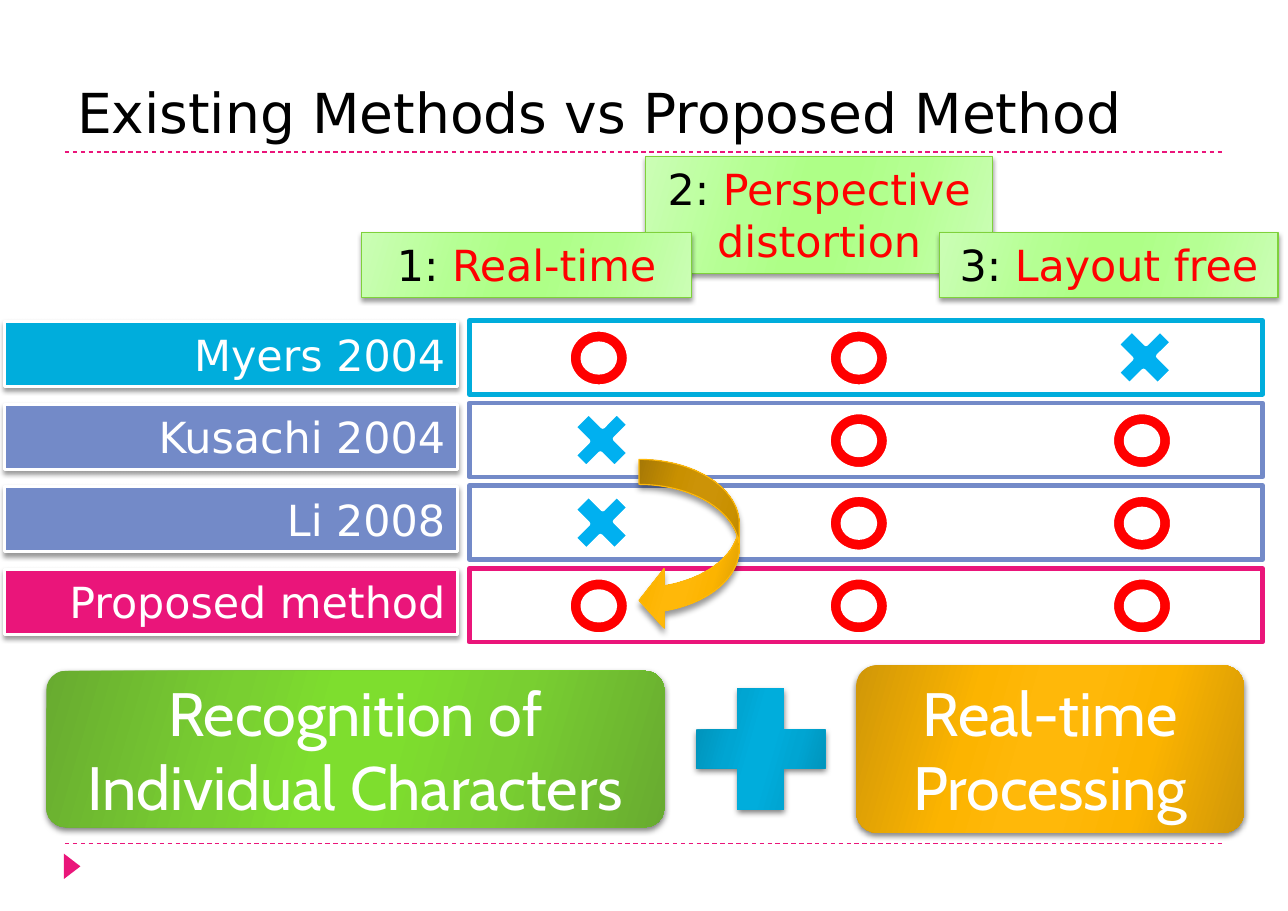
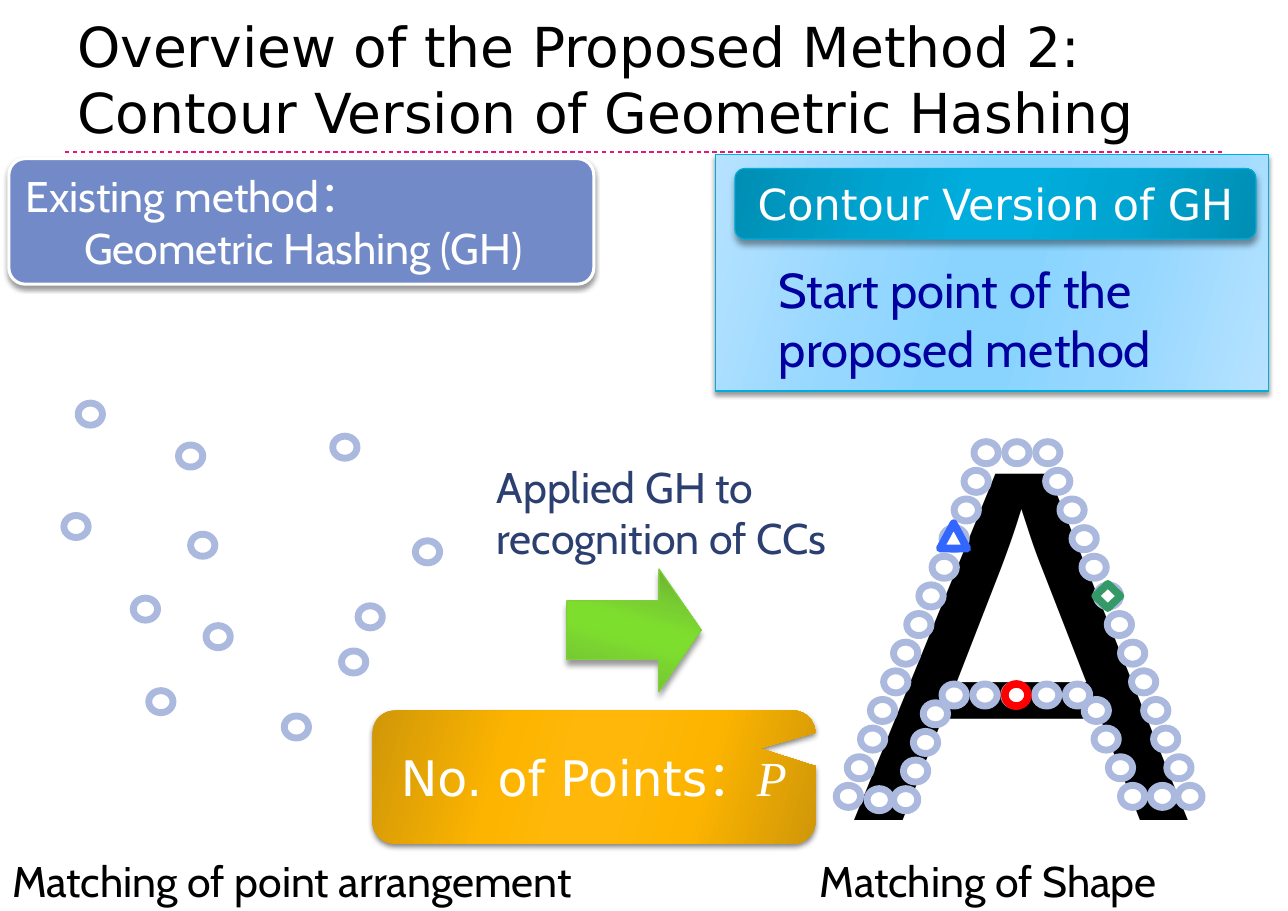
from lxml import etree
from pptx import Presentation
from pptx.dml.color import RGBColor
from pptx.enum import dml, shapes, text
from pptx.oxml.ns import qn
from pptx.util import Inches, Pt

C = {
    "white": "FFFFFF", "black": "000000", "red": "FF0000", "pink": "EA157A",
    "slate": "738AC8", "cyan": "00ADDC", "cross": "00B0F0", "green": "7FD13B",
    "gold": "FEB80A", "dot": "ABB9DE", "blue": "3366FF", "teal": "339966",
    "navy": "0000A0", "ink": "2C3F71",
}
GRADIENTS = {
    "green_fill": ("68AB30", "79CF31", "7EDE2E"),
    "cyan_fill": ("008EB4", "00A5D2", "00ADDC"),
    "gold_fill": ("D09708", "FCB400", "FFB809"),
    "lime_fill": ("CBFEB5", "B5FF93", "AEFF87"),
    "sky_fill": ("B6E2FF", "95D7FF", "89D4FF"),
}
STOPS = ((0, 0), (30, 1), (45, 2), (55, 2), (73, 1), (100, 0))
SOFT, DEEP, RAISED = (40, 3, 2), (50, 4, 2), (40, 4, 3.4)
SANS, CABIN = "DejaVu Sans", "Cabin"
MSO = shapes.MSO_SHAPE
LEFT, CENTER, RIGHT = text.PP_ALIGN.LEFT, text.PP_ALIGN.CENTER, text.PP_ALIGN.RIGHT
TOP, MIDDLE, BOTTOM = text.MSO_ANCHOR.TOP, text.MSO_ANCHOR.MIDDLE, text.MSO_ANCHOR.BOTTOM


def add(s, kind, at, fill, line=None, width=0.75, shadow=None, adj=(), rot=0):
    sp = s.shapes.add_shape(kind, *map(Inches, at))
    sp.rotation = rot
    for i, value in enumerate(adj):
        sp.adjustments[i] = value
    if fill in GRADIENTS:
        sp.fill.gradient()
        sp.fill.gradient_angle = 344
        stops = sp._element.spPr.find(".//" + qn("a:gsLst"))
        for old in list(stops):
            stops.remove(old)
        for pos, shade in STOPS:
            stop = etree.SubElement(stops, qn("a:gs"), pos=str(pos * 1000))
            etree.SubElement(stop, qn("a:srgbClr"), val=GRADIENTS[fill][shade])
    else:
        sp.fill.solid()
        sp.fill.fore_color.rgb = RGBColor.from_string(C[fill])
    if line:
        sp.line.color.rgb = RGBColor.from_string(C[line])
        sp.line.width = Pt(width)
    else:
        sp.line.fill.background()
    sp.shadow.inherit = False
    if shadow:
        alpha, blur, dist = shadow
        effects = sp._element.spPr.find(qn("a:effectLst"))
        outer = etree.SubElement(effects, qn("a:outerShdw"), blurRad=str(Pt(blur)),
                                 dist=str(Pt(dist)), dir="5400000", rotWithShape="0")
        color = etree.SubElement(outer, qn("a:srgbClr"), val=C["black"])
        etree.SubElement(color, qn("a:alpha"), val=str(alpha * 1000))
    return sp


def write(sp, lines, size, font, color, align=LEFT, anchor=TOP, wrap=True):
    tf = sp.text_frame
    tf.word_wrap = wrap
    tf.vertical_anchor = anchor
    tf.margin_left = tf.margin_right = Inches(0.11)
    tf.margin_top = tf.margin_bottom = Inches(0.06)
    tf.text = "\n".join(lines)
    for p in tf.paragraphs:
        p.alignment = align
        for r in p.runs:
            r.font.size = Pt(size)
            r.font.name = font
            r.font.color.rgb = RGBColor.from_string(C[color])
    return tf


prs = Presentation()
prs.slide_width, prs.slide_height = Inches(11.69), Inches(8.27)

titles = (
    ("Existing Methods vs Proposed Method", (1.38, 7.66)),
    ("Overview of the Proposed Method 2: Contour Version of Geometric Hashing", (1.38,)),
)
for title, rules in titles:
    s = prs.slides.add_slide(prs.slide_layouts[6])
    for y in rules:
        rule = s.shapes.add_connector(shapes.MSO_CONNECTOR.STRAIGHT, Inches(0.59), Inches(y),
                                      Inches(11.11), Inches(y))
        rule.line.color.rgb = RGBColor.from_string(C["pink"])
        rule.line.width = Pt(0.75)
        rule.line.dash_style = dml.MSO_LINE.DASH
        etree.SubElement(rule._element.spPr, qn("a:effectLst"))
    box = s.shapes.add_textbox(Inches(0.59), Inches(0.18), Inches(10.52), Inches(1.19))
    write(box, [title], 36, SANS, "black", anchor=BOTTOM)
compare, overview = prs.slides

s = compare
add(s, MSO.ISOSCELES_TRIANGLE, (0.54, 7.79, 0.23, 0.15), "pink", rot=90)
methods = (
    ("Myers 2004", "cyan", "OOX"),
    ("Kusachi 2004", "slate", "XOO"),
    ("Li 2008", "slate", "XOO"),
    ("Proposed method", "pink", "OOO"),
)
for row, (name, color, marks) in enumerate(methods):
    y = 2.91 + 0.75 * row
    add(s, MSO.RECTANGLE, (4.26, y, 7.2, 0.67), "white", color, 3)
    label = add(s, MSO.RECTANGLE, (0.04, y + 0.01, 4.11, 0.59), color, "white", 2, SOFT)
    write(label, [name], 28, SANS, "white", RIGHT)
    for mark, x in zip(marks, (5.44, 7.8, 10.37)):
        if mark == "O":
            add(s, MSO.DONUT, (x - 0.28, y + 0.08, 0.55, 0.52), "red", "white", 3)
        else:
            add(s, MSO.CROSS, (x - 0.24, y + 0.06, 0.52, 0.55), "cross", "white", 3,
                adj=(0.348,), rot=45)

panels = (
    ("Recognition of Individual Characters", (0.42, 6.09, 5.61, 1.42), "green_fill"),
    ("Real-time Processing", (7.77, 6.04, 3.52, 1.52), "gold_fill"),
)
for caption, at, fill in panels:
    panel = add(s, MSO.ROUNDED_RECTANGLE, at, fill, shadow=DEEP, adj=(0.124,))
    write(panel, [caption], 40, CABIN, "white", CENTER, MIDDLE)
add(s, MSO.CROSS, (6.32, 6.25, 1.17, 1.1), "cyan_fill", shadow=DEEP, adj=(0.34,))
add(s, MSO.CURVED_LEFT_ARROW, (5.8, 4.17, 0.91, 1.55), "gold_fill", "gold",
    shadow=RAISED, adj=(0.25, 0.593, 0.25))

criteria = (
    ("2: ", "Perspective distortion", (5.86, 1.42, 3.15, 1.06)),
    ("3: ", "Layout free", (8.53, 2.11, 3.07, 0.59)),
    ("1: ", "Real-time", (3.28, 2.11, 3, 0.59)),
)
for number, criterion, at in criteria:
    tag = add(s, MSO.RECTANGLE, at, "lime_fill", "green", shadow=SOFT)
    p = write(tag, [number], 28, SANS, "black", CENTER).paragraphs[0]
    r = p.add_run()
    r.text = criterion
    r.font.size, r.font.name = Pt(28), SANS
    r.font.color.rgb = RGBColor.from_string(C["red"])

s = overview
letter = s.shapes.add_textbox(Inches(7.64), Inches(2.82), Inches(3.31), Inches(5.65))
write(letter, ["A"], 329, "Arial", "black", wrap=False)

left_leg = (8.75, 8.66, 8.55, 8.46, 8.34, 8.23, 8.11, 8.02, 7.9, 7.81, 7.69, 7.59)
right_leg = (9.49, 9.62, 9.73, 9.82, 9.95, 10.05, 10.17, 10.27, 10.38, 10.47, 10.59, 10.69)
dots = [(8.84 + 0.28 * i, 4.01) for i in range(3)]
dots += [(8.55 + 0.28 * i, 6.21) for i in range(5)]
for xs, top in ((left_leg, 4.27), (right_leg, 4.27),
                ((8.38, 8.29, 8.2), 6.38), ((9.84, 9.93, 10.06), 6.35)):
    dots += [(x, top + 0.26 * i) for i, x in enumerate(xs)]
dots += [(7.87, 7.16), (8.11, 7.16), (10.17, 7.13), (10.44, 7.13)]
dots += [
    (3.02, 3.96), (2.58, 6.5), (0.58, 4.68), (1.62, 4.04), (0.71, 3.66), (3.25, 5.5),
    (1.35, 6.27), (1.21, 5.43), (3.1, 5.91), (3.77, 4.91), (1.87, 5.68), (1.73, 4.85),
]
for x, y in dots:
    add(s, MSO.OVAL, (x, y, 0.22, 0.2), "white", "dot", 4.5)
add(s, MSO.ISOSCELES_TRIANGLE, (8.53, 4.75, 0.25, 0.23), "white", "blue", 5)
add(s, MSO.DIAMOND, (9.94, 5.3, 0.23, 0.22), "white", "teal", 5)
add(s, MSO.OVAL, (9.12, 6.21, 0.21, 0.2), "white", "red", 5)

callout = add(s, MSO.ROUNDED_RECTANGULAR_CALLOUT, (3.38, 6.45, 4.02, 1.21), "gold_fill",
              shadow=DEEP, adj=(0.375, -0.216, 0.167))
p = write(callout, ["No. of Points："], 32, SANS, "white", CENTER, MIDDLE).paragraphs[0]
r = p.add_run()
r.text = "P"
r.font.size, r.font.name, r.font.italic = Pt(32), "Times New Roman", True
r.font.color.rgb = RGBColor.from_string(C["white"])

add(s, MSO.UP_ARROW, (5.2, 5.11, 1.11, 1.22), "green_fill", "green",
    shadow=RAISED, adj=(0.478, 0.346), rot=90)
add(s, MSO.RECTANGLE, (6.49, 1.4, 5.02, 2.15), "sky_fill", "cyan", shadow=SOFT)
existing = add(s, MSO.ROUNDED_RECTANGLE, (0.08, 1.44, 5.31, 1.14), "slate", "white", 2,
               SOFT, (0.131,))
tf = write(existing, ["Existing method：", "Geometric Hashing (GH)"], 28, CABIN, "white")
tf.paragraphs[1]._p.get_or_add_pPr().set("marL", str(Inches(0.53)))
heading = add(s, MSO.ROUNDED_RECTANGLE, (6.67, 1.53, 4.73, 0.64), "cyan_fill", "cyan",
              shadow=RAISED, adj=(0.144,))
write(heading, ["Contour Version of GH"], 28, SANS, "white", CENTER)

notes = (
    ("Matching of point arrangement", (0, 7.7, 5.74, 0.57), 28, "black", False),
    ("Matching of Shape", (7.33, 7.7, 3.42, 0.57), 28, "black", False),
    ("Start point of the proposed method", (6.96, 2.3, 4.4, 1.19), 32, "navy", True),
    ("Applied GH to recognition of CCs", (4.4, 4.12, 3.57, 1.06), 28, "ink", True),
)
for caption, at, size, color, wrap in notes:
    box = s.shapes.add_textbox(*map(Inches, at))
    write(box, [caption], size, CABIN, color, wrap=wrap)

prs.save("out.pptx")
